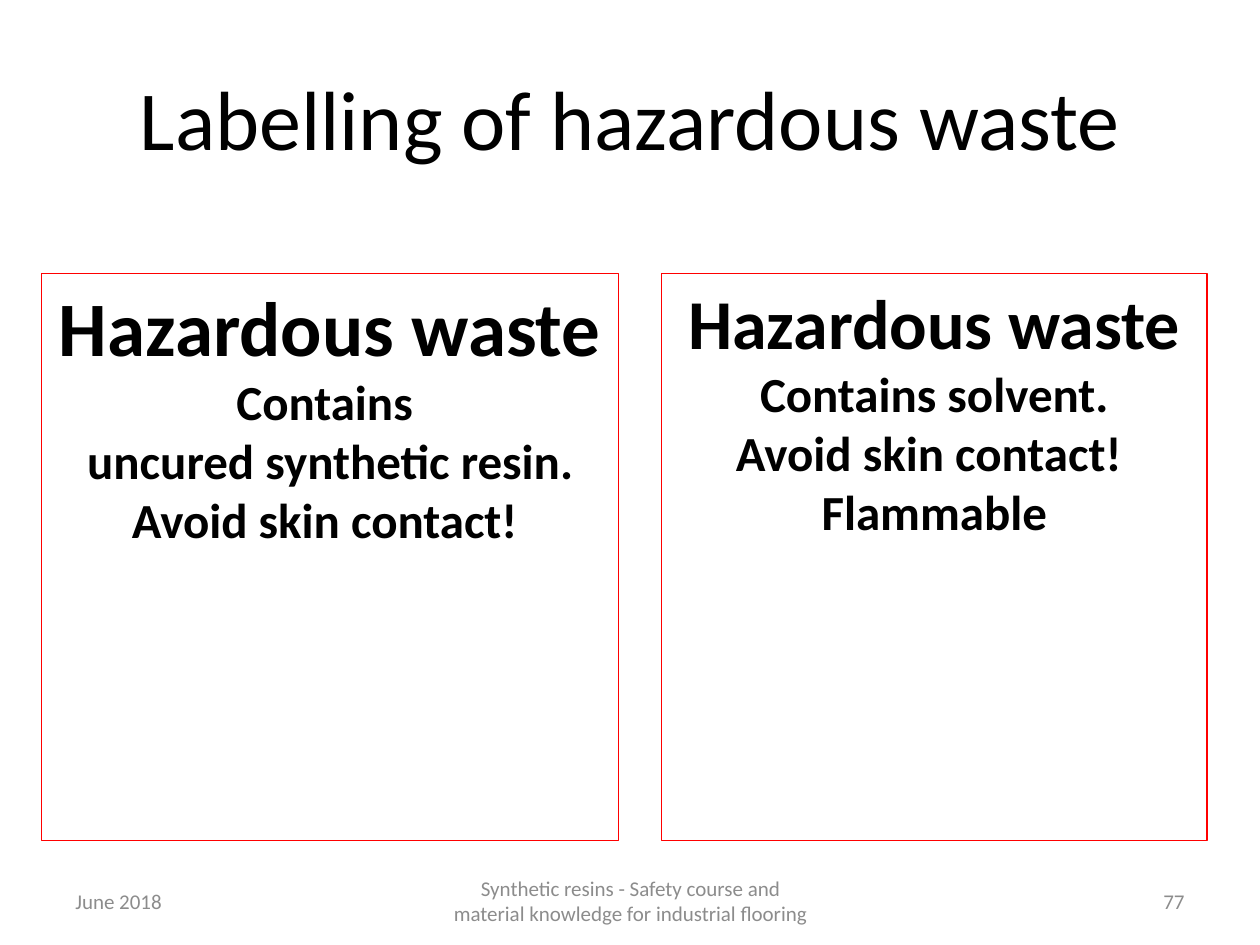
from pptx import Presentation
from pptx.dml.color import RGBColor
from pptx.enum import shapes, text
from pptx.util import Inches, Pt


def color(hex_string):
    return RGBColor.from_string(hex_string)


def style(paragraph, size, hex_string, align, bold=False):
    paragraph.alignment = align
    for run in paragraph.runs:
        run.font.name = "Calibri"
        run.font.size = Pt(size)
        run.font.bold = bold
        run.font.color.rgb = color(hex_string)


LEFT, CENTER, RIGHT = text.PP_ALIGN.LEFT, text.PP_ALIGN.CENTER, text.PP_ALIGN.RIGHT

prs = Presentation()
prs.slide_width, prs.slide_height = Inches(10), Inches(7.5)
slide = prs.slides.add_slide(prs.slide_layouts[5])

# Title
title = slide.shapes.title
title.left, title.top = Inches(0.5), Inches(0.3)
title.width, title.height = Inches(9), Inches(1.25)
title.text_frame.text = "Labelling of hazardous waste"
title.text_frame.vertical_anchor = text.MSO_ANCHOR.MIDDLE
style(title.text_frame.paragraphs[0], 48, "000000", CENTER)

# Waste labels: left, width, heading size, lines under the heading
labels = [
    (0.33, 4.58, 44, ["Contains \vuncured synthetic resin.\vAvoid skin contact! "]),
    (5.25, 4.33, 40, ["Contains solvent.", "Avoid skin contact! ", "Flammable"]),
]
for left, width, heading_size, lines in labels:
    label = slide.shapes.add_shape(
        shapes.MSO_SHAPE.RECTANGLE,
        Inches(left), Inches(2.17), Inches(width), Inches(4.5))
    label.shadow.inherit = False
    label.fill.background()
    label.line.color.rgb = color("FF0000")
    label.line.width = Pt(0.75)
    frame = label.text_frame
    frame.word_wrap = True
    frame.vertical_anchor = text.MSO_ANCHOR.TOP
    frame.text = "Hazardous waste"
    style(frame.paragraphs[0], heading_size, "000000", CENTER, bold=True)
    for line in lines:
        paragraph = frame.add_paragraph()
        paragraph.text = line
        style(paragraph, 28, "000000", CENTER, bold=True)

# Footer: date, course name, slide number
footer = [
    (0.5, 2.33, "June 2018", LEFT),
    (3.42, 3.17, "Synthetic resins - Safety course and material knowledge "
                 "for industrial flooring", CENTER),
    (7.17, 2.33, "77", RIGHT),
]
for left, width, words, align in footer:
    frame = slide.shapes.add_textbox(
        Inches(left), Inches(6.95), Inches(width), Inches(0.4)).text_frame
    frame.word_wrap = True
    frame.vertical_anchor = text.MSO_ANCHOR.MIDDLE
    frame.text = words
    style(frame.paragraphs[0], 12, "8C8C8C", align)

prs.save("out.pptx")
